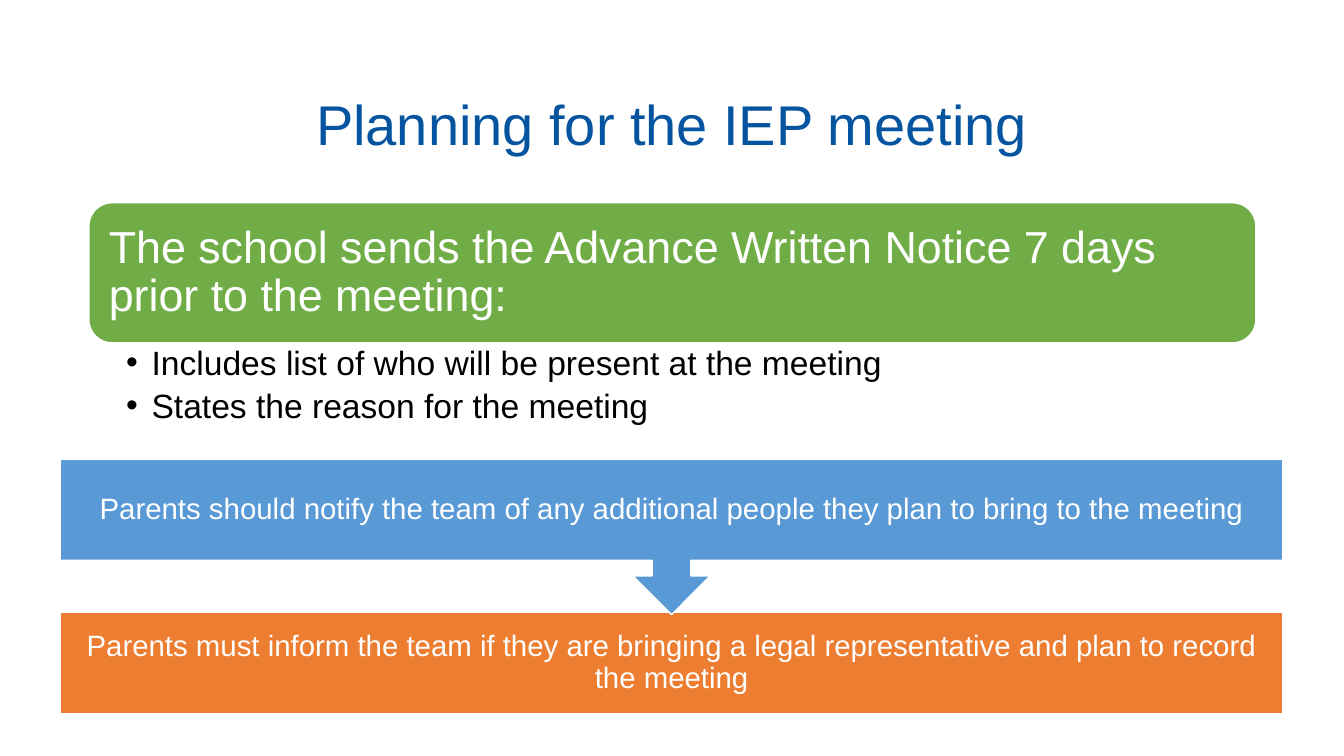
"""Build the slide on planning for the IEP meeting."""
from dataclasses import dataclass

from pptx import Presentation
from pptx.dml.color import RGBColor
from pptx.enum.shapes import MSO_SHAPE as Shape
from pptx.enum.text import MSO_ANCHOR as Anchor, MSO_AUTO_SIZE as AutoSize, PP_ALIGN as Align
from pptx.util import Cm, Pt

WHITE = RGBColor(0xFF, 0xFF, 0xFF)
BLACK = RGBColor(0x00, 0x00, 0x00)
NAVY = RGBColor(0x04, 0x54, 0xA0)
GREEN = RGBColor(0x70, 0xAD, 0x47)
BLUE = RGBColor(0x59, 0x99, 0xD5)
ORANGE = RGBColor(0xED, 0x7D, 0x31)
FONT = "Arial"
BULLET_INDENT = Cm(0.64)


@dataclass
class Banner:
    """A filled shape with its message, measured in centimetres."""
    kind: Shape
    adjustments: tuple[float, ...]
    area: tuple[float, float, float, float]
    fill: RGBColor
    message: str
    size: int
    align: Align
    margin: float


NOTICE_POINTS = [
    "Includes list of who will be present at the meeting",
    "States the reason for the meeting",
]
BANNERS = [
    Banner(Shape.ROUNDED_RECTANGLE, (0.167,), (2.24, 5.11, 29.41, 3.53), GREEN,
           "The school sends the Advance Written Notice 7 days prior to the meeting:",
           32, Align.LEFT, 0.33),
    Banner(Shape.RECTANGLE, (), (1.52, 15.44, 30.81, 2.54), ORANGE,
           "Parents must inform the team if they are bringing a legal representative "
           "and plan to record the meeting",
           21, Align.CENTER, 0.41),
    Banner(Shape.DOWN_ARROW_CALLOUT, (0.25, 0.25, 0.25, 0.65),
           (1.52, 11.58, 30.81, 3.91), BLUE,
           "Parents should notify the team of any additional people they plan to bring "
           "to the meeting",
           21, Align.CENTER, 0.41),
]


def place(box, left: float, top: float, width: float, height: float) -> None:
    """Move and resize a box."""
    box.left, box.top, box.width, box.height = map(Cm, (left, top, width, height))


def set_margins(frame, left: float, top: float, right: float, bottom: float) -> None:
    """Set the inner margins of a text frame."""
    frame.margin_left, frame.margin_top = Cm(left), Cm(top)
    frame.margin_right, frame.margin_bottom = Cm(right), Cm(bottom)


def style(para, size: int, color: RGBColor, align: Align, spacing: float = 0.9) -> None:
    """Format one paragraph."""
    para.font.name, para.font.size = FONT, Pt(size)
    para.font.color.rgb = color
    para.alignment, para.line_spacing = align, spacing
    para.space_before = Pt(0)


def fill_title(title) -> None:
    """Write the slide title."""
    place(title, 6.17, 2.13, 21.51, 1.96)
    frame = title.text_frame
    frame.text = "Planning for the IEP meeting"
    frame.auto_size, frame.vertical_anchor = AutoSize.NONE, Anchor.TOP
    style(frame.paragraphs[0], 40, NAVY, Align.CENTER, 1.0)


def fill_points(body) -> None:
    """Write the bulleted list under the notice."""
    place(body, 2.24, 8.64, 29.41, 2.95)
    frame = body.text_frame
    frame.text = "\n".join(NOTICE_POINTS)
    frame.auto_size, frame.vertical_anchor = AutoSize.NONE, Anchor.TOP
    set_margins(frame, 0.94, 0.08, 0.48, 0.08)
    for para in frame.paragraphs:
        style(para, 24, BLACK, Align.LEFT)
        properties = para._p.get_or_add_pPr()
        properties.set("marL", str(BULLET_INDENT))
        properties.set("indent", str(-BULLET_INDENT))
    frame.paragraphs[-1].space_before = Pt(4.8)


def draw_banner(page, banner: Banner) -> None:
    """Draw one filled banner with its text."""
    box = page.shapes.add_shape(banner.kind, *map(Cm, banner.area))
    for index, value in enumerate(banner.adjustments):
        box.adjustments[index] = value
    box.shadow.inherit = False
    box.fill.solid()
    box.fill.fore_color.rgb = banner.fill
    box.line.color.rgb, box.line.width = WHITE, Pt(1)
    frame = box.text_frame
    frame.text = banner.message
    frame.word_wrap, frame.vertical_anchor = True, Anchor.MIDDLE
    set_margins(frame, *[banner.margin] * 4)
    style(frame.paragraphs[0], banner.size, WHITE, banner.align)


def main() -> None:
    """Build and save the deck."""
    deck = Presentation()
    deck.slide_width, deck.slide_height = Cm(33.87), Cm(19.05)
    page = deck.slides.add_slide(deck.slide_layouts[1])
    fill_title(page.shapes.title)
    fill_points(page.placeholders[1])
    for banner in BANNERS:
        draw_banner(page, banner)
    deck.save("out.pptx")


if __name__ == "__main__":
    main()
